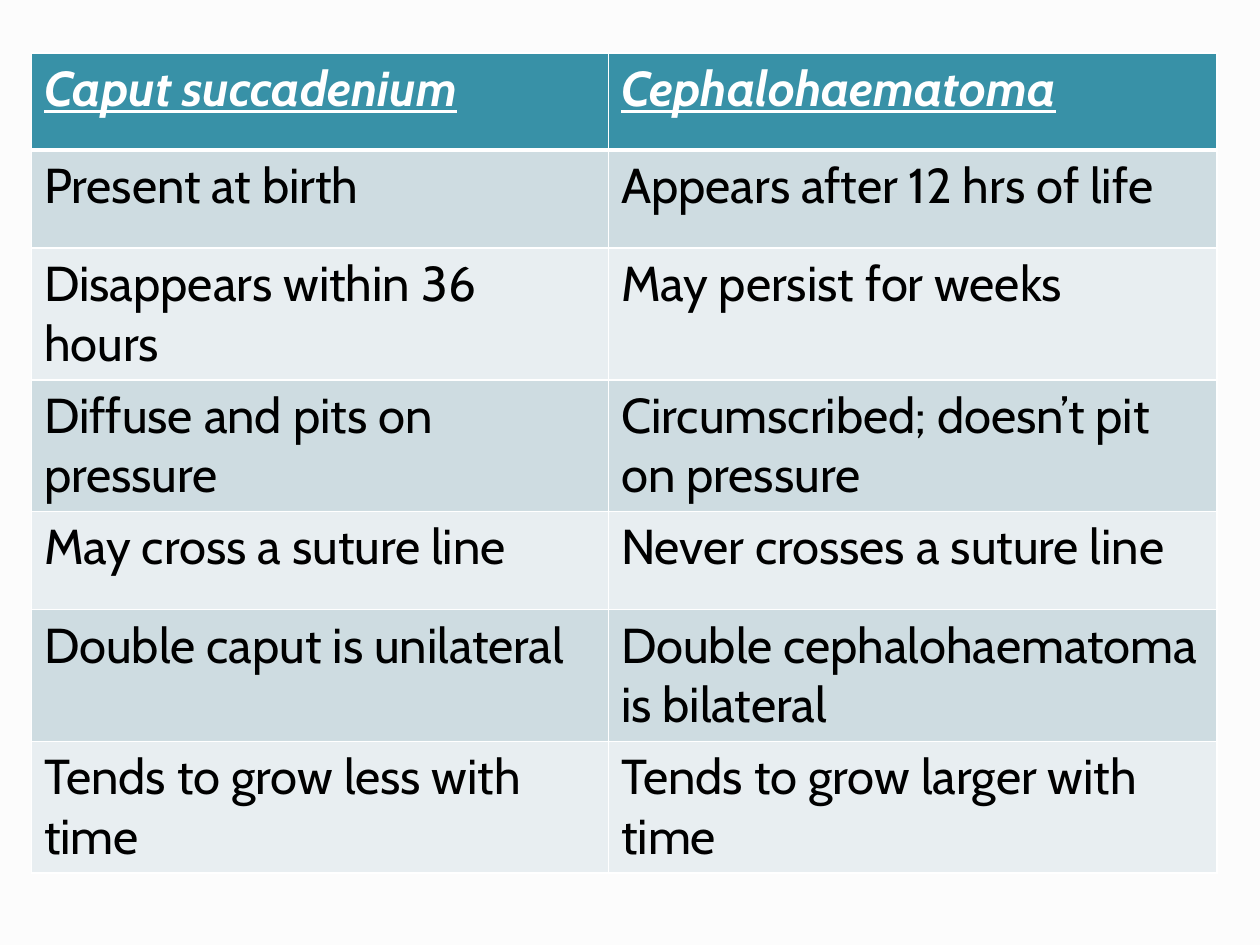
from dataclasses import dataclass

from lxml import etree
from pptx import Presentation
from pptx import util as u
from pptx.dml.color import RGBColor
from pptx.oxml import ns


@dataclass(frozen=True)
class Theme:
    """Colours, font and sizes of the deck."""
    font: str = "Cabin"
    size: int = 28
    background: str = "FCFCFC"
    header: str = "3891A7"
    header_text: str = "FFFFFF"
    body_text: str = "000000"
    bands: tuple = ("CEDCE1", "E8EEF1")
    rule: str = "FFFFFF"
    thin: int = 1
    thick: int = 3


class Deck:
    """Holds the theme and the current slide."""

    def __init__(self, theme, width, height):
        """Start an empty presentation of the given size."""
        self.theme = theme
        self.presentation = Presentation()
        self.presentation.slide_width = u.Inches(width)
        self.presentation.slide_height = u.Inches(height)
        self.slide = None

    def add_slide(self):
        """Add a blank slide with the theme background."""
        self.slide = self.presentation.slides.add_slide(self.presentation.slide_layouts[6])
        fill = self.slide.background.fill
        fill.solid()
        fill.fore_color.rgb = RGBColor.from_string(self.theme.background)

    def add_comparison(self, left, top, widths, heights, rows):
        """Add a banded table whose first row is the header."""
        frame = self.slide.shapes.add_table(
            len(rows), len(widths), u.Inches(left), u.Inches(top),
            u.Inches(sum(widths)), u.Inches(sum(heights)))
        table = frame.table
        for column, width in zip(table.columns, widths):
            column.width = u.Inches(width)
        for index, (row, height, wording) in enumerate(zip(table.rows, heights, rows)):
            row.height = u.Inches(height)
            for cell, words in zip(row.cells, wording):
                self.format_cell(cell, words, index)

    def format_cell(self, cell, words, index):
        """Write one cell and style it by its row index."""
        theme, is_header = self.theme, index == 0
        cell.text_frame.text = words
        font = cell.text_frame.paragraphs[0].runs[0].font
        font.name, font.size = theme.font, u.Pt(theme.size)
        font.bold = font.italic = font.underline = is_header
        font.color.rgb = RGBColor.from_string(
            theme.header_text if is_header else theme.body_text)
        self.rule_cell(cell, {
            "L": theme.thin, "R": theme.thin,
            "T": theme.thick if index == 1 else theme.thin,
            "B": theme.thick if is_header else theme.thin})
        cell.fill.solid()
        cell.fill.fore_color.rgb = RGBColor.from_string(
            theme.header if is_header else theme.bands[(index - 1) % 2])

    def rule_cell(self, cell, weights):
        """Draw the cell borders with the given point weights."""
        properties = cell._tc.get_or_add_tcPr()
        for side, weight in weights.items():
            line = etree.SubElement(properties, ns.qn(f"a:ln{side}"), w=str(u.Pt(weight)))
            fill = etree.SubElement(line, ns.qn("a:solidFill"))
            etree.SubElement(fill, ns.qn("a:srgbClr"), val=self.theme.rule)


def main():
    """Build the slide and save it."""
    findings = [
        ("Caput succadenium", "Cephalohaematoma"),
        ("Present at birth", "Appears after 12 hrs of life"),
        ("Disappears within 36 hours", "May persist for weeks"),
        ("Diffuse and pits on pressure", "Circumscribed; doesn’t pit on pressure"),
        ("May cross a suture line", "Never crosses a suture line"),
        ("Double caput is unilateral", "Double cephalohaematoma is bilateral"),
        ("Tends to grow less with time", "Tends to grow larger with time"),
    ]
    deck = Deck(Theme(), 10, 7.5)
    deck.add_slide()
    deck.add_comparison(0.25, 0.42, [4.58, 4.83],
                        [0.77] + [0.78] * (len(findings) - 1), findings)
    deck.presentation.save("out.pptx")


if __name__ == "__main__":
    main()
